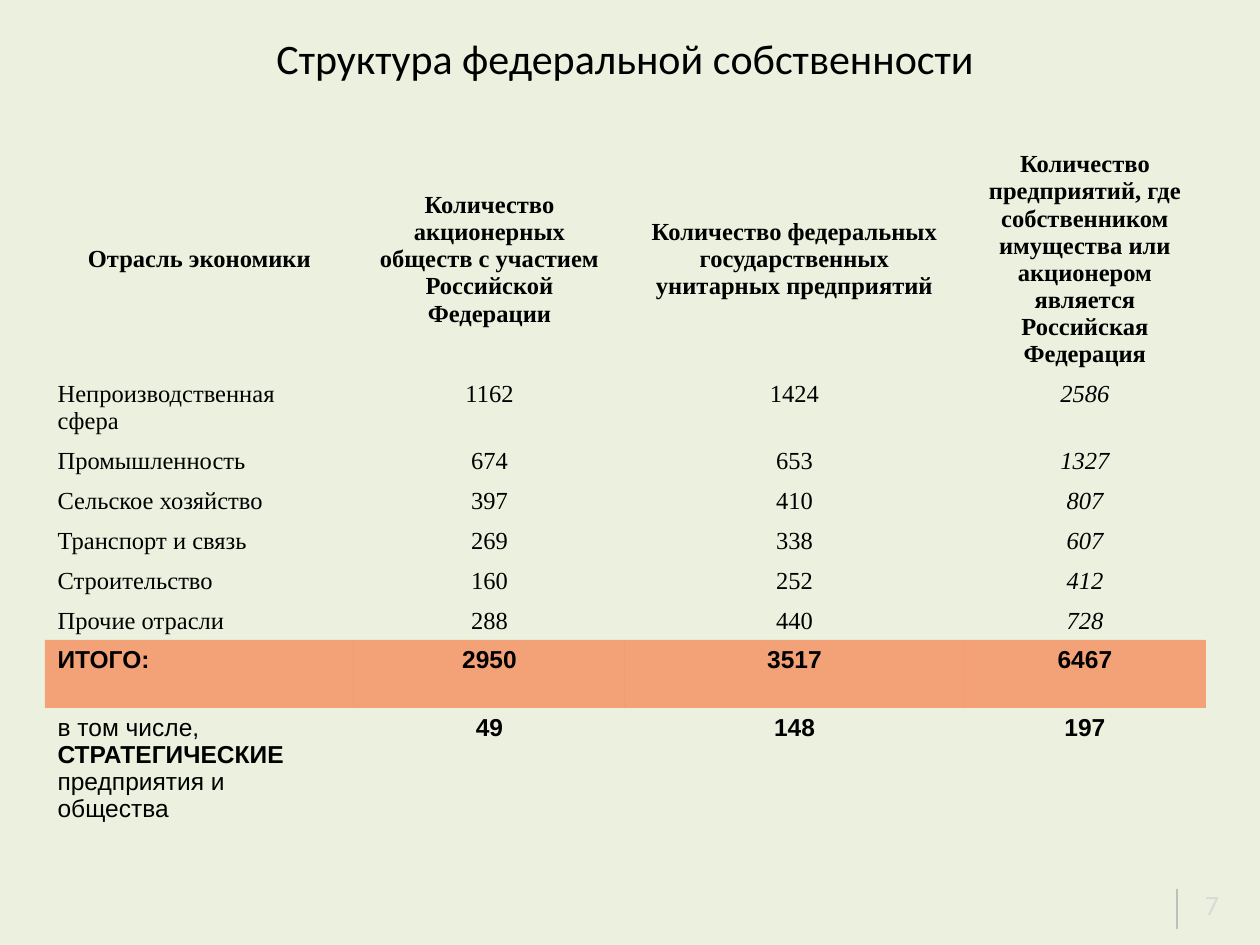
from lxml.etree import SubElement
from pptx import Presentation
from pptx.dml.color import RGBColor
from pptx.enum.shapes import MSO_CONNECTOR
from pptx.enum.text import MSO_ANCHOR, PP_ALIGN
from pptx.oxml.ns import qn
from pptx.util import Pt

EMU_PER_PX = 914400 / 126
NO_STYLE = "{2D5ABB26-0587-4C30-8999-92F81FD0307C}"
SERIF, SANS, HEADING = "Times New Roman", "Arial", "Calibri"

COLUMN_WIDTHS = [309, 271, 339, 242]
ROW_HEIGHTS = [229, 67, 40, 40, 40, 40, 39, 68, 122]
HEADERS = [
    "Отрасль экономики",
    "Количество акционерных обществ с участием Российской Федерации",
    "Количество федеральных государственных унитарных предприятий",
    "Количество предприятий, где собственником имущества или "
    "акционером является Российская Федерация",
]
INDUSTRIES = [
    ("Непроизводственная сфера", 1162, 1424, 2586),
    ("Промышленность", 674, 653, 1327),
    ("Сельское хозяйство", 397, 410, 807),
    ("Транспорт и связь", 269, 338, 607),
    ("Строительство", 160, 252, 412),
    ("Прочие отрасли", 288, 440, 728),
]
TOTAL = ("ИТОГО:", 2950, 3517, 6467)
STRATEGIC_LABEL = [("в том числе, ", False), ("СТРАТЕГИЧЕСКИЕ ", True),
                   ("предприятия и общества", False)]
STRATEGIC = (49, 148, 197)


def px(length):
    return round(length * EMU_PER_PX)


def color(hex_string):
    return RGBColor.from_string(hex_string)


def add_span(para, text, font=SERIF, size=14, bold=False, italic=False, ink="000000"):
    span = para.add_run()
    span.text = str(text)
    span.font.name, span.font.size = font, Pt(size)
    span.font.bold, span.font.italic = bold, italic
    span.font.color.rgb = color(ink)


def fill_cell(cell, text, align=PP_ALIGN.CENTER, **text_format):
    para = cell.text_frame.paragraphs[0]
    para.alignment = align
    para.line_spacing = Pt(15.5)
    add_span(para, text, **text_format)


def shade_cell(cell, hex_string, opacity):
    cell.fill.solid()
    cell.fill.fore_color.rgb = color(hex_string)
    tint = cell.fill._xPr.find(".//" + qn("a:srgbClr"))
    SubElement(tint, qn("a:alpha")).set("val", str(opacity * 1000))


def place_title(page, left, top, width, height):
    title = page.shapes.title
    title.left, title.top, title.width, title.height = map(px, (left, top, width, height))
    title.text_frame.vertical_anchor = MSO_ANCHOR.MIDDLE
    para = title.text_frame.paragraphs[0]
    para.alignment = PP_ALIGN.CENTER
    add_span(para, "Структура федеральной собственности ", font=HEADING, size=24)


def add_ownership_table(page, left, top):
    frame = page.shapes.add_table(
        len(ROW_HEIGHTS), len(COLUMN_WIDTHS), px(left), px(top),
        px(sum(COLUMN_WIDTHS)), px(sum(ROW_HEIGHTS)))
    table = frame.table
    table.first_row = table.horz_banding = False
    table._tbl.tblPr.find(qn("a:tableStyleId")).text = NO_STYLE
    for column, width in zip(table.columns, COLUMN_WIDTHS):
        column.width = px(width)
    for row, height in zip(table.rows, ROW_HEIGHTS):
        row.height = px(height)
    for cell in table.iter_cells():
        cell.fill.background()
        cell.margin_bottom = 0

    header_row, *industry_rows, total_row, strategic_row = table.rows
    for cell, text in zip(header_row.cells, HEADERS):
        cell.vertical_anchor = MSO_ANCHOR.MIDDLE
        cell.margin_top = 0
        fill_cell(cell, text, bold=True)
    for row, (name, companies, enterprises, both) in zip(industry_rows, INDUSTRIES):
        label, *counts, row_sum = row.cells
        fill_cell(label, name, align=PP_ALIGN.LEFT)
        for cell, count in zip(counts, (companies, enterprises)):
            fill_cell(cell, count)
        fill_cell(row_sum, both, italic=True)
    for index, (cell, text) in enumerate(zip(total_row.cells, TOTAL)):
        align = PP_ALIGN.CENTER if index else PP_ALIGN.LEFT
        fill_cell(cell, text, align=align, font=SANS, bold=True)
        shade_cell(cell, "FC5310", 50)
    label, *counts = strategic_row.cells
    for text, bold in STRATEGIC_LABEL:
        fill_cell(label, text, align=PP_ALIGN.LEFT, font=SANS, bold=bold)
    for cell, count in zip(counts, STRATEGIC):
        fill_cell(cell, count, font=SANS, bold=True)


def add_page_number(page, left, top, width, height):
    """Draw a vertical rule at the left edge and the number beside it."""
    rule = page.shapes.add_connector(
        MSO_CONNECTOR.STRAIGHT, px(left), px(top), px(left), px(top + height))
    rule.line.color.rgb = color("BFBFBF")
    rule.line.width = Pt(1)
    SubElement(rule._element.spPr, qn("a:effectLst"))

    box = page.shapes.add_textbox(px(left), px(top), px(width), px(height - 9))
    text_frame = box.text_frame
    text_frame.word_wrap = True
    text_frame.vertical_anchor = MSO_ANCHOR.MIDDLE
    para = text_frame.paragraphs[0]
    para.alignment = PP_ALIGN.CENTER
    add_span(para, "7", font=HEADING, size=16, ink="D9D9D9")


def main():
    deck = Presentation()
    deck.slide_width, deck.slide_height = px(1260), px(945)
    page = deck.slides.add_slide(deck.slide_layouts[5])
    page.background.fill.solid()
    page.background.fill.fore_color.rgb = color("EBF1DE")
    place_title(page, 0, 26, 1260, 63)
    add_page_number(page, 1177, 889, 70, 40)
    add_ownership_table(page, 45, 145)
    deck.save("out.pptx")


if __name__ == "__main__":
    main()
